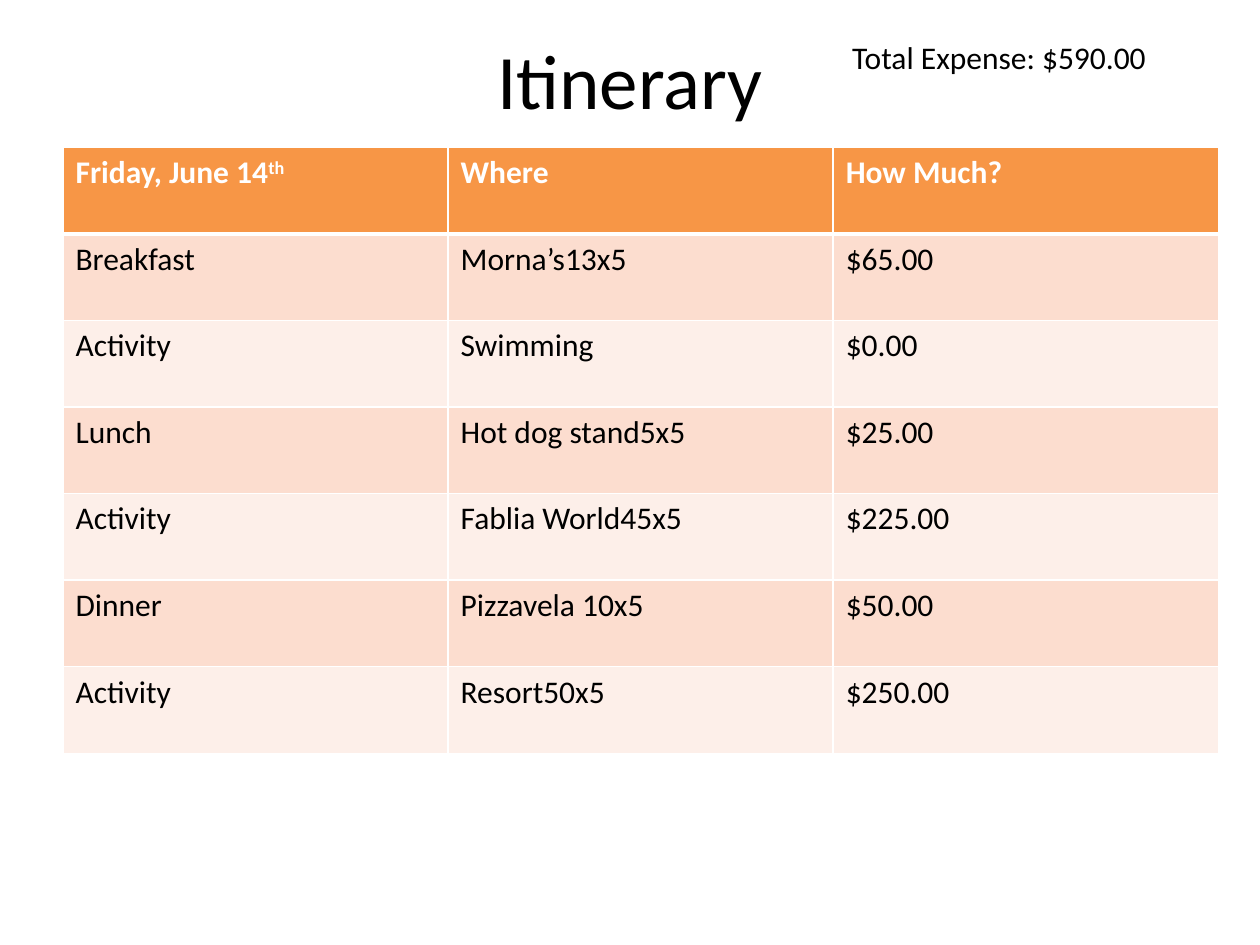
from dataclasses import dataclass

from lxml.etree import SubElement
from pptx import Presentation
from pptx.dml.color import RGBColor
from pptx.enum.text import MSO_ANCHOR, MSO_AUTO_SIZE, PP_ALIGN
from pptx.oxml.ns import qn
from pptx.util import Cm, Pt


@dataclass(frozen=True)
class Theme:
    font: str = "Calibri"
    title_size: int = 44
    body_size: int = 18
    text: str = "000000"
    white: str = "FFFFFF"
    header: str = "F79646"
    bands: tuple = ("FCDDCF", "FDEFE9")
    rule: int = 1
    header_rule: int = 3


THEME = Theme()

HEADINGS = ("Friday, June 14", "Where", "How Much?")
DATE_SUFFIX = "th"
PLANS = (
    ("Breakfast", "Morna’s13x5", "$65.00"),
    ("Activity", "Swimming", "$0.00"),
    ("Lunch", "Hot dog stand5x5", "$25.00"),
    ("Activity", "Fablia World45x5", "$225.00"),
    ("Dinner", "Pizzavela 10x5", "$50.00"),
    ("Activity", "Resort50x5", "$250.00"),
)


def style_runs(paragraph, size=THEME.body_size, color=THEME.text, bold=False):
    for run in paragraph.runs:
        run.font.name = THEME.font
        run.font.size = Pt(size)
        run.font.bold = bold
        run.font.color.rgb = RGBColor.from_string(color)


def add_title(slide, text):
    title = slide.shapes.title
    title.left, title.top, title.width, title.height = Cm(1.27), Cm(0), Cm(22.86), Cm(3.18)
    frame = title.text_frame
    frame.text = text
    frame.vertical_anchor = MSO_ANCHOR.MIDDLE
    heading = frame.paragraphs[0]
    heading.alignment = PP_ALIGN.CENTER
    style_runs(heading, THEME.title_size)


def add_total(slide, text):
    total = slide.shapes.add_textbox(Cm(16.93), Cm(0.64), Cm(7.83), Cm(1.03))
    frame = total.text_frame
    frame.word_wrap = True
    frame.auto_size = MSO_AUTO_SIZE.SHAPE_TO_FIT_TEXT
    frame.text = text
    style_runs(frame.paragraphs[0])


def add_borders(cell, top, bottom):
    """Draw white cell borders; call before the fill, which must follow them."""
    properties = cell._tc.get_or_add_tcPr()
    widths = {"lnL": THEME.rule, "lnR": THEME.rule, "lnT": top, "lnB": bottom}
    for side, width in widths.items():
        line = SubElement(properties, qn(f"a:{side}"), w=str(Pt(width)))
        fill = SubElement(line, qn("a:solidFill"))
        SubElement(fill, qn("a:srgbClr"), val=THEME.white)


def fill_cell(cell, text, fill, color, bold, top, bottom):
    cell.text = text
    style_runs(cell.text_frame.paragraphs[0], color=color, bold=bold)
    add_borders(cell, top, bottom)
    cell.fill.solid()
    cell.fill.fore_color.rgb = RGBColor.from_string(fill)


def add_superscript(paragraph, text):
    suffix = paragraph.add_run()
    suffix.text = text
    style_runs(paragraph, color=THEME.white, bold=True)
    suffix.font._element.set("baseline", "30000")


def add_itinerary(slide):
    rows = (HEADINGS, *PLANS)
    itinerary = slide.shapes.add_table(
        len(rows), len(HEADINGS), Cm(1.27), Cm(2.97), Cm(23.29), Cm(12.22)
    ).table
    for row_index, entries in enumerate(rows):
        is_header = row_index == 0
        fill = THEME.header if is_header else THEME.bands[(row_index - 1) % 2]
        color = THEME.white if is_header else THEME.text
        top = THEME.header_rule if row_index == 1 else THEME.rule
        bottom = THEME.header_rule if is_header else THEME.rule
        for column, entry in enumerate(entries):
            fill_cell(itinerary.cell(row_index, column), entry, fill, color,
                      is_header, top, bottom)
    add_superscript(itinerary.cell(0, 0).text_frame.paragraphs[0], DATE_SUFFIX)


def main():
    deck = Presentation()
    deck.slide_width, deck.slide_height = Cm(25.4), Cm(19.05)
    slide = deck.slides.add_slide(deck.slide_layouts[5])

    # Heading and trip cost
    add_title(slide, "Itinerary")
    add_total(slide, "Total Expense: $590.00")

    # Day plan
    add_itinerary(slide)

    deck.save("out.pptx")


if __name__ == "__main__":
    main()
